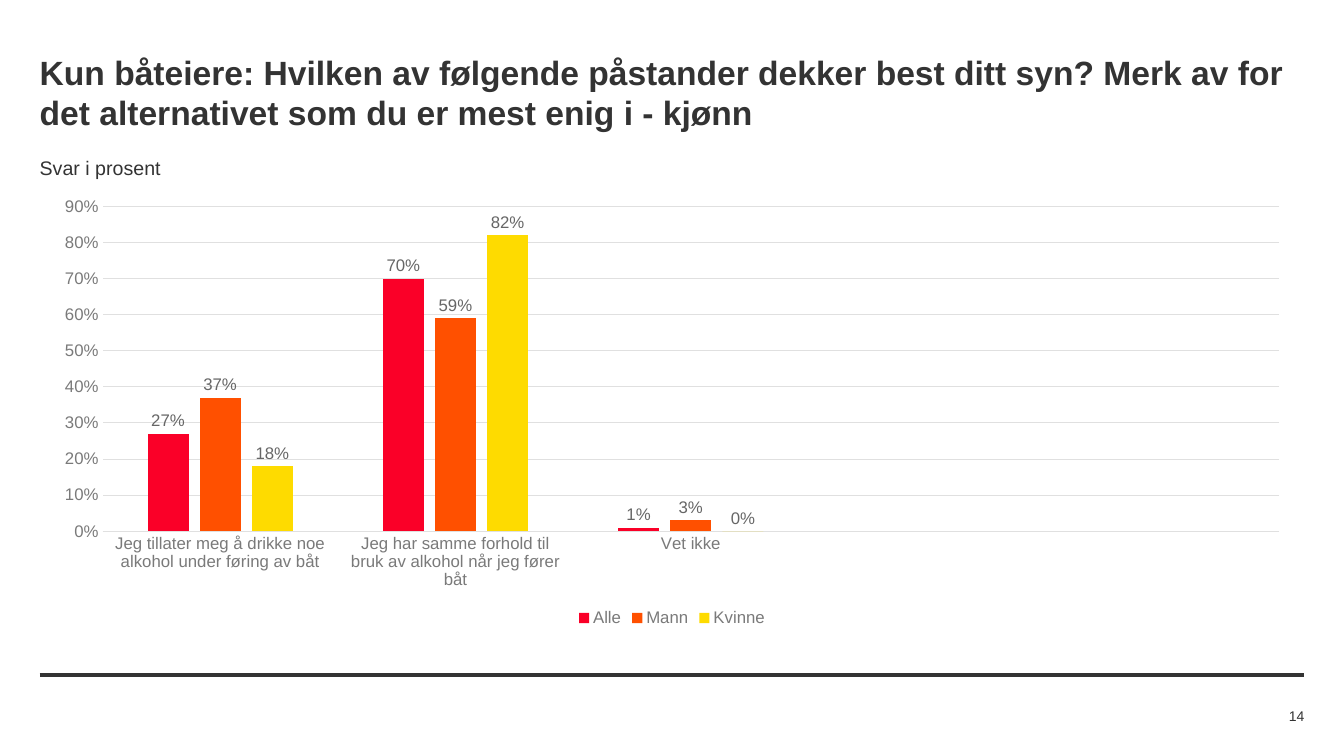
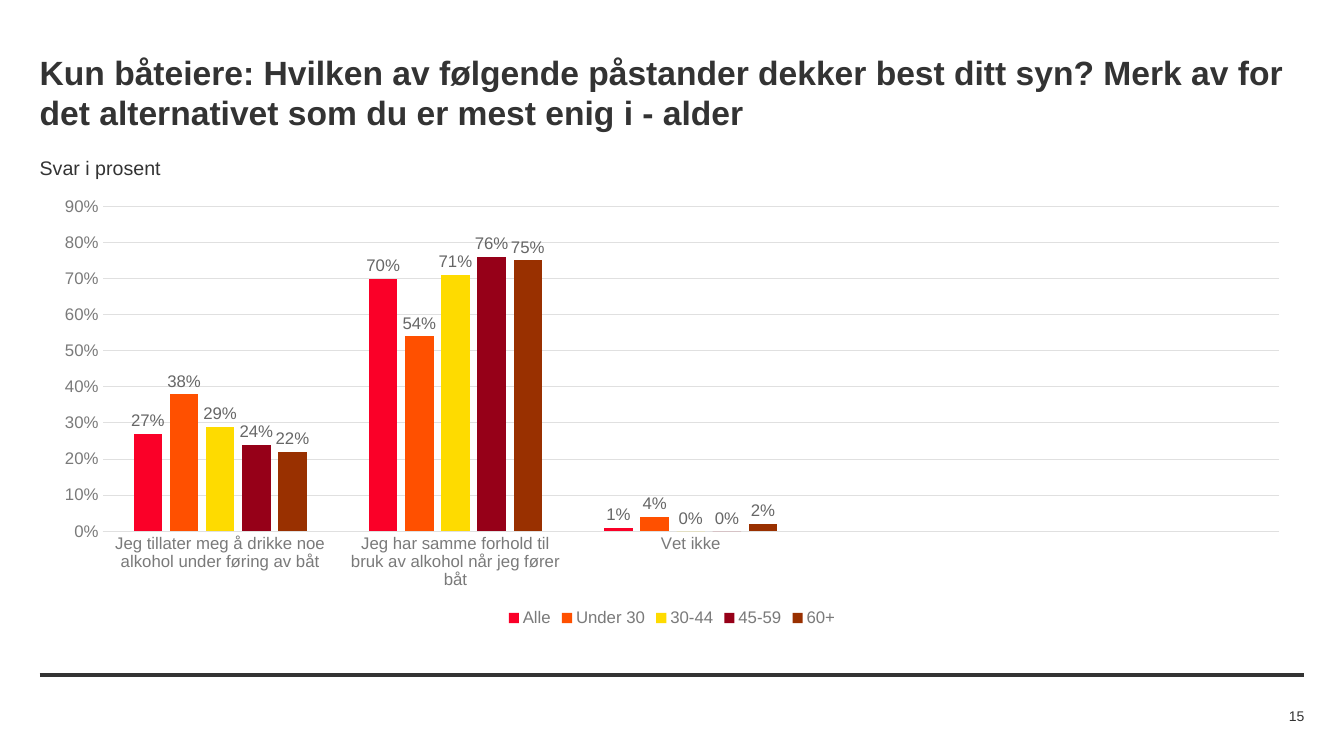
from lxml import etree
from pptx import Presentation
from pptx.chart.data import CategoryChartData
from pptx.dml.color import RGBColor
from pptx.enum.chart import XL_CHART_TYPE, XL_LABEL_POSITION, XL_LEGEND_POSITION, XL_TICK_MARK
from pptx.enum.shapes import MSO_CONNECTOR
from pptx.enum.text import MSO_ANCHOR, MSO_AUTO_SIZE, PP_ALIGN
from pptx.oxml.ns import qn
from pptx.util import Cm, Pt

COLUMNS = XL_CHART_TYPE.COLUMN_CLUSTERED
LABEL_ABOVE = XL_LABEL_POSITION.OUTSIDE_END
LEGEND_BELOW = XL_LEGEND_POSITION.BOTTOM
NO_TICK = XL_TICK_MARK.NONE
STRAIGHT = MSO_CONNECTOR.STRAIGHT
TOP, MIDDLE = MSO_ANCHOR.TOP, MSO_ANCHOR.MIDDLE
NO_FIT = MSO_AUTO_SIZE.NONE
LEFT, RIGHT = PP_ALIGN.LEFT, PP_ALIGN.RIGHT

TITLE_ONLY_LAYOUT = 5
PAGE_WIDTH, PAGE_HEIGHT, MARGIN = 33.87, 19.05, 1
CONTENT_WIDTH = PAGE_WIDTH - 2 * MARGIN

QUESTION = ("Kun båteiere: Hvilken av følgende påstander dekker best ditt syn? "
            "Merk av for det alternativet som du er mest enig i - ")
# The last two answer slots are left empty.
ANSWERS = ["Jeg tillater meg å drikke noe alkohol under føring av båt",
           "Jeg har samme forhold til bruk av alkohol når jeg fører båt",
           "Vet ikke", "", ""]
EVERYONE = (0.27, 0.70, 0.01)
PAGES = [
    (14, "kjønn", {
        "Alle": EVERYONE,
        "Mann": (0.37, 0.59, 0.03),
        "Kvinne": (0.18, 0.82, 0),
    }),
    (15, "alder", {
        "Alle": EVERYONE,
        "Under 30": (0.38, 0.54, 0.04),
        "30-44": (0.29, 0.71, 0),
        "45-59": (0.24, 0.76, 0),
        "60+": (0.22, 0.75, 0.02),
    }),
]


def rgb(value):
    return RGBColor.from_string(value)


class SurveyDeck:
    """Holds the style and the page that elements are added to."""

    FONT = "Arial"
    INK, AXIS_TEXT, LABEL_TEXT, GRID = "333333", "7A7A7A", "666666", "E0E0E0"
    SERIES = ["FA0028", "FF5000", "FEDB00", "960018", "993000"]

    def __init__(self):
        self.deck = Presentation()
        self.deck.slide_width = Cm(PAGE_WIDTH)
        self.deck.slide_height = Cm(PAGE_HEIGHT)
        self.page = None

    def add_page(self):
        layout = self.deck.slide_layouts[TITLE_ONLY_LAYOUT]
        self.page = self.deck.slides.add_slide(layout)

    def style_font(self, font, size, colour, bold=False):
        font.name = self.FONT
        font.size = Pt(size)
        font.bold = bold
        font.color.rgb = rgb(colour)

    def fill_text(self, box, text, size, bold=False, align=LEFT, anchor=TOP, wrap=True):
        frame = box.text_frame
        frame.margin_left = frame.margin_right = 0
        frame.margin_top = frame.margin_bottom = 0
        frame.word_wrap = wrap
        frame.auto_size = NO_FIT
        frame.vertical_anchor = anchor
        frame.text = text
        para = frame.paragraphs[0]
        para.alignment = align
        for span in para.runs:
            self.style_font(span.font, size, self.INK, bold)

    def title(self, text):
        box = self.page.shapes.title
        box.left, box.top = Cm(MARGIN), Cm(1.3)
        box.width, box.height = Cm(CONTENT_WIDTH), Cm(1.12)
        self.fill_text(box, text, 24, bold=True)

    def subtitle(self, text):
        box = self.page.shapes.add_textbox(Cm(MARGIN), Cm(3.94), Cm(3.1), Cm(0.61))
        self.fill_text(box, text, 14, wrap=False)

    def footer(self, number):
        end = PAGE_WIDTH - MARGIN
        rule = self.page.shapes.add_connector(STRAIGHT, Cm(MARGIN), Cm(17), Cm(end), Cm(17))
        rule.line.color.rgb = rgb(self.INK)
        rule.line.width = Pt(3)
        etree.SubElement(rule.element.spPr, qn("a:effectLst"))
        width = 2.7
        box = self.page.shapes.add_textbox(Cm(end - width), Cm(17.75), Cm(width), Cm(0.56))
        self.fill_text(box, str(number), 10, align=RIGHT, anchor=MIDDLE)

    def column_chart(self, answers, groups):
        data = CategoryChartData(number_format="0%")
        data.categories = answers
        for name, shares in groups.items():
            blanks = (None,) * (len(answers) - len(shares))
            data.add_series(name, shares + blanks)
        chart = self.page.shapes.add_chart(
            COLUMNS, Cm(MARGIN), Cm(4.75), Cm(CONTENT_WIDTH), Cm(11.15), data).chart
        self.style_font(chart.font, 10, self.INK)
        chart.has_title = False
        chart.has_legend = True
        chart.legend.position = LEGEND_BELOW
        chart.legend.include_in_layout = False
        self.style_font(chart.legend.font, 12, self.AXIS_TEXT)
        self.style_axes(chart)
        self.style_columns(chart.plots[0])

    def style_axes(self, chart):
        category_axis, value_axis = chart.category_axis, chart.value_axis
        for axis in (category_axis, value_axis):
            axis.major_tick_mark = axis.minor_tick_mark = NO_TICK
            self.style_font(axis.tick_labels.font, 12, self.AXIS_TEXT)
        value_axis.minimum_scale, value_axis.maximum_scale = 0, 0.9
        value_axis.major_unit = 0.1
        value_axis.tick_labels.number_format = "0%"
        value_axis.tick_labels.number_format_is_linked = False
        value_axis.format.line.fill.background()
        for line in (category_axis.format.line, value_axis.major_gridlines.format.line):
            line.color.rgb = rgb(self.GRID)
            line.width = Pt(0.75)

    def style_columns(self, plot):
        plot.gap_width, plot.overlap = 219, -27
        plot.vary_by_categories = False
        for series, colour in zip(plot.series, self.SERIES):
            series.invert_if_negative = False
            series.format.fill.solid()
            series.format.fill.fore_color.rgb = rgb(colour)
            labels = series.data_labels
            labels.show_value = True
            labels.position = LABEL_ABOVE
            labels.number_format = "0%"
            labels.number_format_is_linked = False
            self.style_font(labels.font, 12, self.LABEL_TEXT)


def main():
    survey = SurveyDeck()
    for number, breakdown, groups in PAGES:
        survey.add_page()
        survey.footer(number)
        survey.column_chart(ANSWERS, groups)
        survey.title(QUESTION + breakdown)
        survey.subtitle("Svar i prosent")
    survey.deck.save("out.pptx")


if __name__ == "__main__":
    main()
